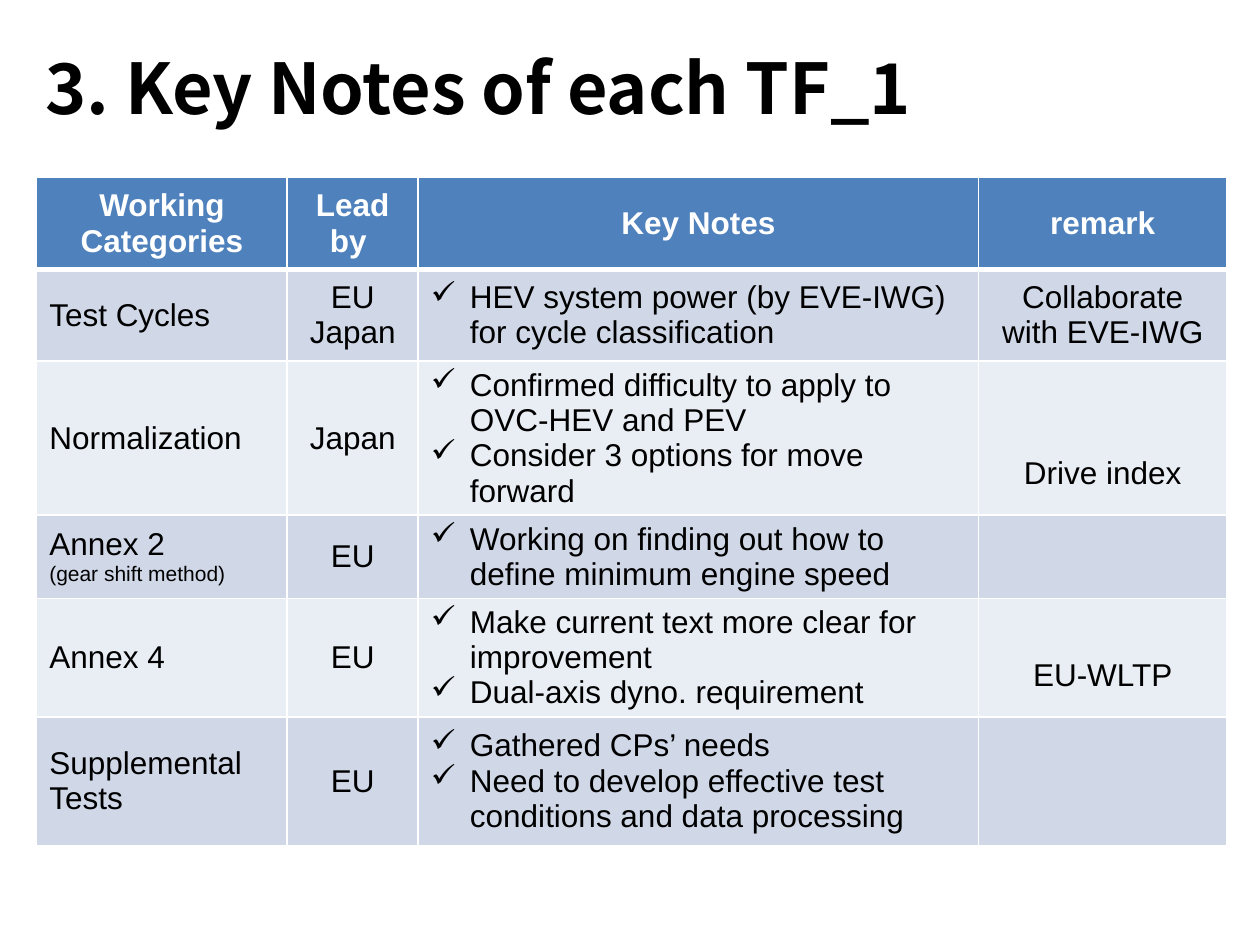
from dataclasses import dataclass

from lxml.etree import SubElement
from pptx import Presentation
from pptx.dml.color import RGBColor
from pptx.enum.text import MSO_ANCHOR, MSO_AUTO_SIZE, PP_ALIGN
from pptx.oxml.ns import qn
from pptx.util import Cm, Pt


@dataclass(frozen=True)
class Theme:
    title_font: str = "Noto Sans CJK JP"
    body_font: str = "Arial"
    title_size: int = 40
    body_size: int = 18
    note_size: int = 12
    text: str = "000000"
    header_text: str = "FFFFFF"
    header_fill: str = "4F81BD"
    bands: tuple = ("D0D8E8", "E9EDF4")
    border: str = "FFFFFF"


THEME = Theme()
COLUMN_WIDTHS = (5.05, 2.64, 11.3, 5.0)
ROW_HEIGHTS = (1.85, 1.85, 2.49, 1.68, 2.06, 2.59)
LINE_HEIGHT = 0.72
CELL_MARGIN = 0.13

HEADERS = (["Working", "Categories"], ["Lead by "], ["Key Notes"], ["remark"])

# Category, lead, key notes, remark, lines by which the remark is lowered
ROWS = (
    (["Test Cycles"], ["EU", "Japan"],
     ["HEV system power (by EVE-IWG) for cycle classification"],
     ["Collaborate with EVE-IWG"], 0),
    (["Normalization"], ["Japan"],
     ["Confirmed difficulty to apply to OVC-HEV and PEV",
      "Consider 3 options for move forward"],
     ["Drive index"], 2),
    (["Annex 2", "(gear shift method)"], ["EU"],
     ["Working on finding out how to define minimum engine speed"], [], 0),
    (["Annex 4"], ["EU"],
     ["Make current text more clear for improvement",
      "Dual-axis dyno. requirement"],
     ["EU-WLTP"], 1),
    (["Supplemental Tests"], ["EU"],
     ["Gathered CPs’ needs",
      "Need to develop effective test conditions and data processing"], [], 0),
)


def add_span(para, text, size, color, font=THEME.body_font, bold=False):
    span = para.add_run()
    span.text = text
    span.font.name = font
    span.font.size = Pt(size)
    span.font.bold = bold
    span.font.color.rgb = RGBColor.from_string(color)
    return span


def add_check_bullet(para):
    properties = para._p.get_or_add_pPr()
    indent = Cm(0.79)
    properties.set("marL", str(indent))
    properties.set("indent", str(-indent))
    SubElement(properties, qn("a:buChar"), char="✓")


def set_borders(cell, bottom_width):
    """Draw the four cell edges; they must precede the fill in the XML."""
    properties = cell._tc.get_or_add_tcPr()
    widths = {"lnL": 1, "lnR": 1, "lnT": 1, "lnB": bottom_width}
    for name, width in widths.items():
        line = SubElement(properties, qn(f"a:{name}"), w=str(Pt(width)))
        fill = SubElement(line, qn("a:solidFill"))
        SubElement(fill, qn("a:srgbClr"), val=THEME.border)


def fill_cell(cell, lines, fill, color=THEME.text, bold=False, bottom_width=1,
              align=PP_ALIGN.CENTER, bullets=False, second_size=THEME.body_size,
              lowered_lines=0):
    set_borders(cell, bottom_width)
    cell.fill.solid()
    cell.fill.fore_color.rgb = RGBColor.from_string(fill)
    cell.vertical_anchor = MSO_ANCHOR.MIDDLE
    cell.margin_top = Cm(CELL_MARGIN + lowered_lines * LINE_HEIGHT)
    frame = cell.text_frame
    for index, text in enumerate(lines):
        para = frame.add_paragraph() if index else frame.paragraphs[0]
        para.alignment = align
        if bullets:
            add_check_bullet(para)
        add_span(para, text, second_size if index else THEME.body_size,
                 color, bold=bold)


def add_title(page, text):
    box = page.shapes.title
    box.left, box.top, box.width, box.height = Cm(0.66), Cm(0.76), Cm(20.68), Cm(1.96)
    frame = box.text_frame
    frame.word_wrap = False
    frame.auto_size = MSO_AUTO_SIZE.NONE
    frame.vertical_anchor = MSO_ANCHOR.MIDDLE
    para = frame.paragraphs[0]
    para.alignment = PP_ALIGN.LEFT
    add_span(para, text, THEME.title_size, THEME.text, THEME.title_font, bold=True)


def add_key_notes_table(page):
    table = page.shapes.add_table(
        len(ROW_HEIGHTS), len(COLUMN_WIDTHS), Cm(0.74), Cm(3.58),
        Cm(sum(COLUMN_WIDTHS)), Cm(sum(ROW_HEIGHTS))).table
    for column, width in zip(table.columns, COLUMN_WIDTHS):
        column.width = Cm(width)
    for row, height in zip(table.rows, ROW_HEIGHTS):
        row.height = Cm(height)

    # Header row
    for column, lines in enumerate(HEADERS):
        fill_cell(table.cell(0, column), lines, THEME.header_fill,
                  THEME.header_text, bold=True, bottom_width=3)

    # Banded body rows
    for number, (category, lead, notes, remark, lowered) in enumerate(ROWS, 1):
        band = THEME.bands[(number - 1) % 2]
        fill_cell(table.cell(number, 0), category, band, align=PP_ALIGN.LEFT,
                  second_size=THEME.note_size)
        fill_cell(table.cell(number, 1), lead, band)
        fill_cell(table.cell(number, 2), notes, band, align=PP_ALIGN.LEFT,
                  bullets=True)
        fill_cell(table.cell(number, 3), remark, band, lowered_lines=lowered)


def main():
    deck = Presentation()
    deck.slide_width, deck.slide_height = Cm(25.4), Cm(19.05)
    page = deck.slides.add_slide(deck.slide_layouts[5])
    add_title(page, "3. Key Notes of each TF_1")
    add_key_notes_table(page)
    deck.save("out.pptx")


if __name__ == "__main__":
    main()
